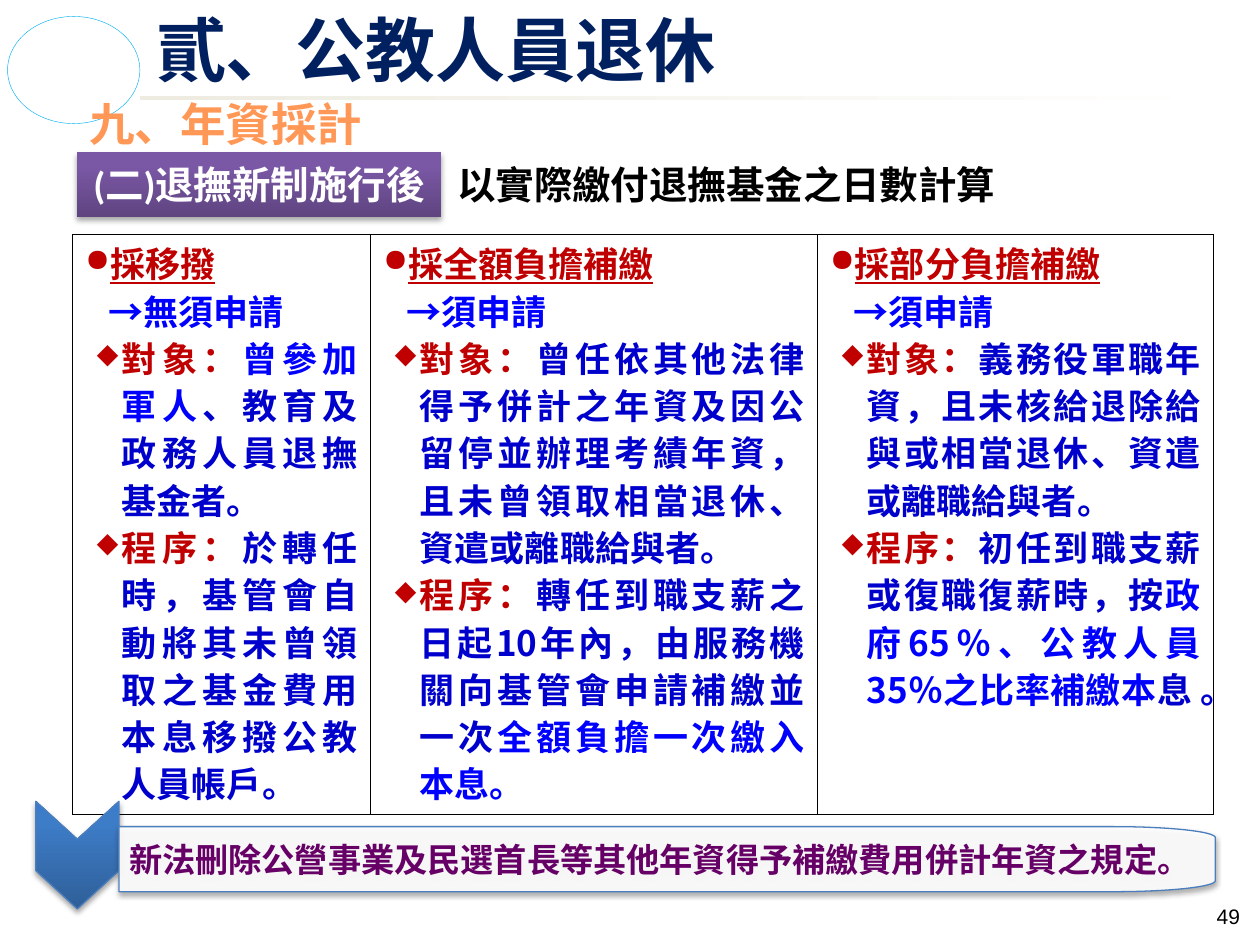
"""Build the slide on counting service years for retirement."""
from lxml import etree
from pptx import Presentation
from pptx.dml.color import RGBColor
from pptx.enum.shapes import MSO_SHAPE
from pptx.enum.text import MSO_ANCHOR, PP_ALIGN
from pptx.oxml.ns import qn
from pptx.util import Pt

RECT, OVAL = MSO_SHAPE.RECTANGLE, MSO_SHAPE.OVAL
TOP, MIDDLE = MSO_ANCHOR.TOP, MSO_ANCHOR.MIDDLE
LEFT, CENTER, RIGHT = PP_ALIGN.LEFT, PP_ALIGN.CENTER, PP_ALIGN.RIGHT
JUSTIFY = PP_ALIGN.JUSTIFY

BLACK = RGBColor(0x00, 0x00, 0x00)
WHITE = RGBColor(0xFF, 0xFF, 0xFF)
CREAM = RGBColor(0xEE, 0xEC, 0xE1)
SKY = RGBColor(0x00, 0xB0, 0xF0)
NAVY = RGBColor(0x00, 0x20, 0x60)
ORANGE = RGBColor(0xFF, 0x98, 0x56)
RED = RGBColor(0xC0, 0x00, 0x00)
BLUE = RGBColor(0x00, 0x00, 0xFF)
INK = RGBColor(0x00, 0x00, 0xCC)
PLUM = RGBColor(0x66, 0x00, 0x66)
EDGE = RGBColor(0x4B, 0x7E, 0xBC)
RULE_FADE = [(0, CREAM), (100, WHITE)]
PURPLES = [(0, RGBColor(0x5F, 0x44, 0x80)), (80, RGBColor(0x7B, 0x58, 0xA6)),
           (100, RGBColor(0x7C, 0x57, 0xA8))]
BLUES = [(0, RGBColor(0x2F, 0x5F, 0x99)), (80, RGBColor(0x3D, 0x7C, 0xC7)),
         (100, RGBColor(0x3A, 0x7C, 0xCB))]

CJK = "Noto Sans CJK SC"
WHO, HOW = ("對象：", RED), ("程序：", RED)
CASES = [
    (170.3, "採移撥", "→無須申請", [
        [WHO, ("曾參加軍人", BLUE), ("、教育及政務人員退撫基金者。", INK)],
        [HOW, ("於轉任時，基管會自動將其未曾領取之基金費用本息移撥公教人員帳戶。", INK)]]),
    (255.4, "採全額負擔補繳", "→須申請", [
        [WHO, ("曾任依其他法律得予併計之年資及因公留停並辦理考績年資，"
               "且未曾領取相當退休、資遣或離職給與者。", INK)],
        [HOW, ("轉任到職支薪之日起10年內，由服務機關向基管會申請補繳並一次", INK),
         ("全額負擔一次繳入本息。", BLUE)]]),
    (226.3, "採部分負擔補繳", "→須申請", [
        [WHO, ("義務役軍職年資，且未核給退除給與或相當退休、資遣或離職給與者。", INK)],
        [HOW, ("初任到職支薪或復職復薪時，按", INK),
         ("政府65％、公教人員35％之比率補繳本", BLUE), ("息 。", INK)]]),
]


def add_xml(parent, tag, **attrs):
    """Append a drawing element with the given attributes."""
    return etree.SubElement(parent, qn(tag), {k: str(v) for k, v in attrs.items()})


def set_font(para, size, color, name=CJK, bold=True):
    """Set the font of a whole paragraph."""
    font = para.font
    font.size, font.bold, font.name = Pt(size), bold, name
    font.color.rgb = color
    add_xml(font._element, "a:ea", typeface=CJK)


def put_text(shape, text, size, color, name=CJK, bold=True, align=LEFT,
             anchor=TOP, wrap=True):
    """Write one paragraph into a shape."""
    frame = shape.text_frame
    frame.word_wrap, frame.vertical_anchor = wrap, anchor
    para = frame.paragraphs[0]
    para.text, para.alignment = text, align
    set_font(para, size, color, name, bold)


def add_label(slide, box, *args, **style):
    """Add a text box."""
    put_text(slide.shapes.add_textbox(*map(Pt, box)), *args, **style)


def set_line(shape, color=None, width=0.75):
    """Outline a shape, or clear its outline."""
    shape.shadow.inherit = False
    if color is None:
        shape.line.fill.background()
    else:
        shape.line.color.rgb, shape.line.width = color, Pt(width)


def blend(shape, stops, angle):
    """Fill a shape with a linear gradient."""
    shape.fill.gradient()
    shape.fill.gradient_angle = angle
    holder = shape._element.spPr.find(qn("a:gradFill")).find(qn("a:gsLst"))
    for old in list(holder):
        holder.remove(old)
    for pos, color in stops:
        add_xml(add_xml(holder, "a:gs", pos=pos * 1000), "a:srgbClr", val=color)


def cast(shape):
    """Give a shape a soft shadow below it."""
    effects = shape._element.spPr.find(qn("a:effectLst"))
    outer = add_xml(effects, "a:outerShdw", blurRad=Pt(3.1), dist=Pt(1.8),
                    dir=5400000, rotWithShape=0)
    add_xml(add_xml(outer, "a:srgbClr", val=BLACK), "a:alpha", val=35000)


def add_form(slide, points):
    """Add a closed outline through points."""
    dots = [(Pt(x), Pt(y)) for x, y in points]
    pen = slide.shapes.build_freeform(*dots[0], scale=1.0)
    pen.add_line_segments(dots[1:], close=True)
    return pen.convert_to_shape()


def curve(start, one, two, end, steps=16):
    """Return points along a cubic curve."""
    spots = [n / steps for n in range(steps + 1)]
    return [tuple((1 - t) ** 3 * a + 3 * t * (1 - t) ** 2 * b
                  + 3 * t * t * (1 - t) * c + t ** 3 * d
                  for a, b, c, d in zip(start, one, two, end)) for t in spots]


def set_bullet(para, char, size, left=0, indent=0):
    """Give a paragraph a red bullet and its indents."""
    props = para._p.get_or_add_pPr()
    props.set("marL", str(Pt(left)))
    props.set("indent", str(Pt(indent)))
    if char:
        add_xml(add_xml(props, "a:buClr"), "a:srgbClr", val=RED)
        add_xml(props, "a:buSzPct", val=size * 1000)
        add_xml(props, "a:buChar", char=char)


def add_runs(para, runs):
    """Add coloured runs to a table paragraph."""
    para.line_spacing = Pt(27)
    set_font(para, 20, INK)
    for text, color in runs:
        run = para.add_run()
        run.text, run.font.color.rgb = text, color


def fill_cell(cell, head, act, notes):
    """Write one case into a bordered cell."""
    props = cell._tc.get_or_add_tcPr()
    for side in "LRTB":
        line = add_xml(props, f"a:ln{side}", w=Pt(0.25))
        add_xml(add_xml(line, "a:solidFill"), "a:srgbClr", val=BLACK)
    cell.fill.background()
    frame = cell.text_frame
    para = frame.paragraphs[0]
    set_bullet(para, "●", 90)
    add_runs(para, [(head, RED)])
    para.runs[0].font.underline = True
    para = frame.add_paragraph()
    set_bullet(para, "", 0, left=13.4)
    add_runs(para, [(act, BLUE)])
    for runs in notes:
        para = frame.add_paragraph()
        para.level, para.alignment = 1, JUSTIFY
        set_bullet(para, "◆", 80, left=21, indent=-14.2)
        add_runs(para, runs)


def add_cases(slide):
    """Add the table of cases."""
    width = sum(case[0] for case in CASES)
    box = map(Pt, (41.4, 133.9, width, 331.2))
    table = slide.shapes.add_table(1, len(CASES), *box).table
    table.first_row = table.horz_banding = False
    for col, (wide, *words) in enumerate(CASES):
        table.columns[col].width = Pt(wide)
        fill_cell(table.cell(0, col), *words)


def add_frame(slide):
    """Add the fading rule and the ring at the top."""
    rule = slide.shapes.add_shape(RECT, *map(Pt, (80, 55, 631.4, 2.2)))
    blend(rule, RULE_FADE, 0)
    set_line(rule)
    ring = slide.shapes.add_shape(OVAL, *map(Pt, (4.3, 9.4, 75.6, 61.2)))
    ring.fill.background()
    set_line(ring, SKY, 0.25)


def add_tag(slide):
    """Add the purple section tag."""
    tag = slide.shapes.add_shape(RECT, *map(Pt, (43.9, 87.1, 208.1, 36.7)))
    blend(tag, PURPLES, 90)
    set_line(tag)
    cast(tag)
    put_text(tag, "(二)退撫新制施行後", 22, WHITE, "Calibri",
             align=CENTER, anchor=MIDDLE, wrap=False)


def add_law(slide):
    """Add the arrow and the bar on the new law."""
    arrow = add_form(slide, [(68, 457.9), (68, 497.5), (44.2, 519.4),
                             (20.5, 497.5), (20.5, 457.9), (44.2, 479.5)])
    blend(arrow, BLUES, 90)
    low = curve((694.5, 503.3), (694.5, 506.8), (668, 509.6), (635.8, 509.6))
    high = curve((635.8, 472.4), (668, 472.4), (694.5, 475.2), (694.5, 478.7))
    bar = add_form(slide, low + [(68, 509.6), (68, 472.4)] + high)
    bar.fill.solid()
    bar.fill.fore_color.rgb = WHITE
    tint = bar._element.spPr.find(qn("a:solidFill"))[0]
    add_xml(tint, "a:alpha", val=90000)
    for shape in (arrow, bar):
        set_line(shape, EDGE)
        cast(shape)
    bar.text_frame.margin_left, bar.text_frame.margin_right = Pt(5.8), Pt(0)
    put_text(bar, "新法刪除公營事業及民選首長等其他年資得予補繳費用併計年資之規定。",
             19, PLUM, anchor=MIDDLE)


def main():
    """Build and save the slide."""
    deck = Presentation()
    deck.slide_width, deck.slide_height = Pt(720), Pt(540)
    slide = deck.slides.add_slide(deck.slide_layouts[6])
    add_frame(slide)
    add_label(slide, (683.3, 512.6, 32.4, 25.9), "49", 12, BLACK, "Arial",
              bold=False, align=RIGHT)
    add_label(slide, (82.1, 2.2, 612.7, 51.1), "貳、公教人員退休", 40, NAVY,
              anchor=MIDDLE)
    add_label(slide, (43.9, 51.1, 625, 31.7), "九、年資採計", 26, ORANGE)
    add_tag(slide)
    add_cases(slide)
    add_label(slide, (254.2, 88.6, 325.4, 33.8), "以實際繳付退撫基金之日數計算",
              22, BLACK, wrap=False)
    add_law(slide)
    deck.save("out.pptx")


if __name__ == "__main__":
    main()
